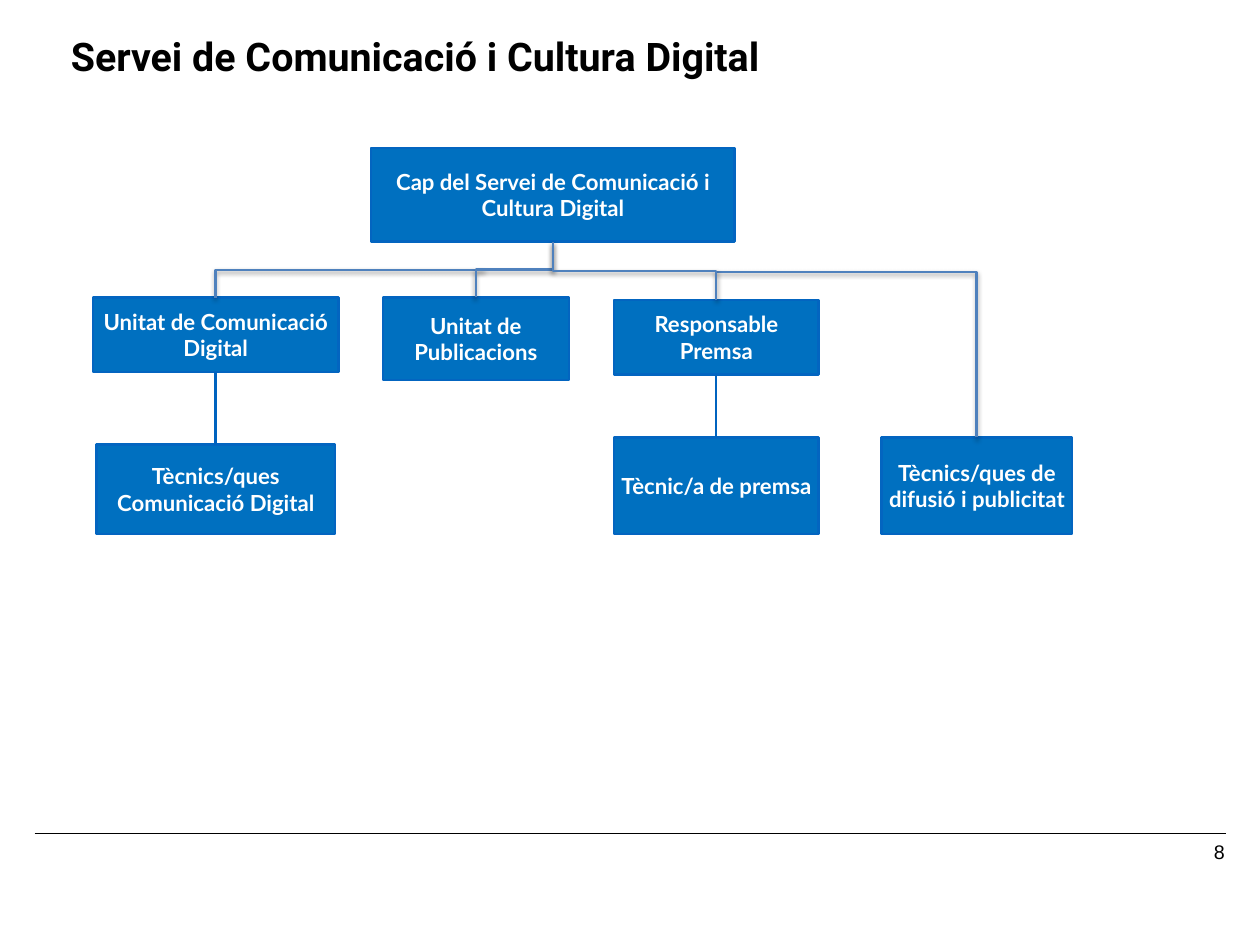
import pptx
import pptx.dml.color
import pptx.enum.shapes
import pptx.enum.text
import pptx.oxml
import pptx.oxml.ns
import pptx.util

PX = 9144
COLOR = pptx.dml.color.RGBColor.from_string
ALIGN = pptx.enum.text.PP_ALIGN
ANCHOR = pptx.enum.text.MSO_ANCHOR
CONNECTOR = pptx.enum.shapes.MSO_CONNECTOR

THEME = {
    "ink": COLOR("000000"),
    "box": COLOR("0070C0"),
    "border": COLOR("0365C0"),
    "branch": COLOR("4F81BD"),
    "stem": COLOR("0063BF"),
    "title": {"name": "Roboto", "size": pptx.util.Pt(32), "bold": True},
    "label": {"name": "Lato", "size": pptx.util.Pt(18), "bold": True},
    "number": {"name": "Arial", "size": pptx.util.Pt(16), "bold": False},
}

BOXES = [
    ("Cap del Servei de Comunicació i Cultura Digital", 419, 167, 410, 106),
    ("Unitat de Comunicació Digital", 105, 336, 277, 84),
    ("Unitat de Publicacions", 432, 336, 210, 93),
    ("Responsable Premsa", 693, 339, 231, 84),
    ("Tècnics/ques Comunicació Digital", 109, 502, 269, 101),
    ("Tècnic/a de premsa", 693, 494, 231, 109),
    ("Tècnics/ques de difusió i publicitat", 995, 494, 215, 109),
]
BRANCHES = [
    ("bentConnector2", 243, 336, 547, 305),
    ("bentConnector2", 1102, 494, 807, 307),
    ("bentConnector3", 537, 336, 624, 273),
    ("bentConnector3", 808, 339, 624, 273),
]
STEMS = [(243, 420, 243, 502), (808, 423, 808, 494)]

SHADOW = (
    '<a:outerShdw xmlns:a="http://schemas.openxmlformats.org/drawingml/2006/main" '
    'blurRad="50800" dist="25400" dir="5400000" rotWithShape="0">'
    '<a:srgbClr val="000000"><a:alpha val="38000"/></a:srgbClr></a:outerShdw>'
)


def px(*lengths):
    return [pptx.util.Emu(round(length * PX)) for length in lengths]


def apply(target, values):
    for name, value in values.items():
        setattr(target, name, value)


def write(shape, text, font, color, inset, align, anchor=ANCHOR.TOP, spacing=1.0):
    frame = shape.text_frame
    horizontal, vertical = px(*inset)
    apply(frame, {
        "word_wrap": True, "vertical_anchor": anchor,
        "margin_left": horizontal, "margin_right": horizontal,
        "margin_top": vertical, "margin_bottom": vertical,
    })
    paragraph = frame.paragraphs[0]
    apply(paragraph, {"text": text, "alignment": align, "line_spacing": spacing})
    apply(paragraph.font, font)
    paragraph.font.color.rgb = color


def add_text(slide, text, place, **style):
    write(slide.shapes.add_textbox(*px(*place)), text, color=THEME["ink"], **style)


def add_box(slide, text, *place):
    shape = slide.shapes.add_shape(pptx.enum.shapes.MSO_SHAPE.RECTANGLE, *px(*place))
    shape.shadow.inherit = False
    shape.fill.solid()
    shape.fill.fore_color.rgb = THEME["box"]
    shape.line.color.rgb = THEME["border"]
    shape.line.width = pptx.util.Pt(2)
    write(shape, text, THEME["label"], COLOR("FFFFFF"), (4, 4), ALIGN.CENTER, ANCHOR.MIDDLE)


def add_line(slide, points, color, width, kind=CONNECTOR.STRAIGHT):
    connector = slide.shapes.add_connector(kind, *px(*points))
    connector.line.color.rgb = color
    connector.line.width = pptx.util.Pt(width)
    effects = pptx.oxml.parse_xml(
        '<a:effectLst xmlns:a="http://schemas.openxmlformats.org/drawingml/2006/main"/>')
    connector._element.spPr.append(effects)
    return connector, effects


def add_branch(slide, preset, x1, y1, x2, y2):
    connector, effects = add_line(
        slide, (x1, y1, x2, y2), THEME["branch"], 2, CONNECTOR.ELBOW)
    effects.append(pptx.oxml.parse_xml(SHADOW))
    width, height = abs(y2 - y1), abs(x2 - x1)
    left, top, wide, high = px(
        (x1 + x2 - width) / 2, (y1 + y2 - height) / 2, width, height)
    apply(connector, {"left": left, "top": top, "width": wide, "height": high})
    rightward = x2 > x1
    properties = connector._element.spPr
    transform = properties.find(pptx.oxml.ns.qn("a:xfrm"))
    transform.set("rot", str((90 if rightward else 270) * 60000))
    transform.set("flipH", "1" if rightward else "0")
    transform.set("flipV", "1")
    properties.find(pptx.oxml.ns.qn("a:prstGeom")).set("prst", preset)


def main():
    presentation = pptx.Presentation()
    presentation.slide_width, presentation.slide_height = px(1422, 1067)
    slide = presentation.slides.add_slide(presentation.slide_layouts[6])
    add_line(slide, (39, 941, 1384, 941), THEME["ink"], 1)
    for box in BOXES:
        add_box(slide, *box)
    add_text(slide, "Servei de Comunicació i Cultura Digital", (73, 40, 1300, 57),
             font=THEME["title"], inset=(7, 7), align=ALIGN.LEFT, spacing=0.8)
    add_text(slide, "8", (1060, 943, 332, 41),
             font=THEME["number"], inset=(10, 5), align=ALIGN.RIGHT)
    for branch in BRANCHES:
        add_branch(slide, *branch)
    for stem in STEMS:
        add_line(slide, stem, THEME["stem"], 2.25)
    presentation.save("out.pptx")


if __name__ == "__main__":
    main()
